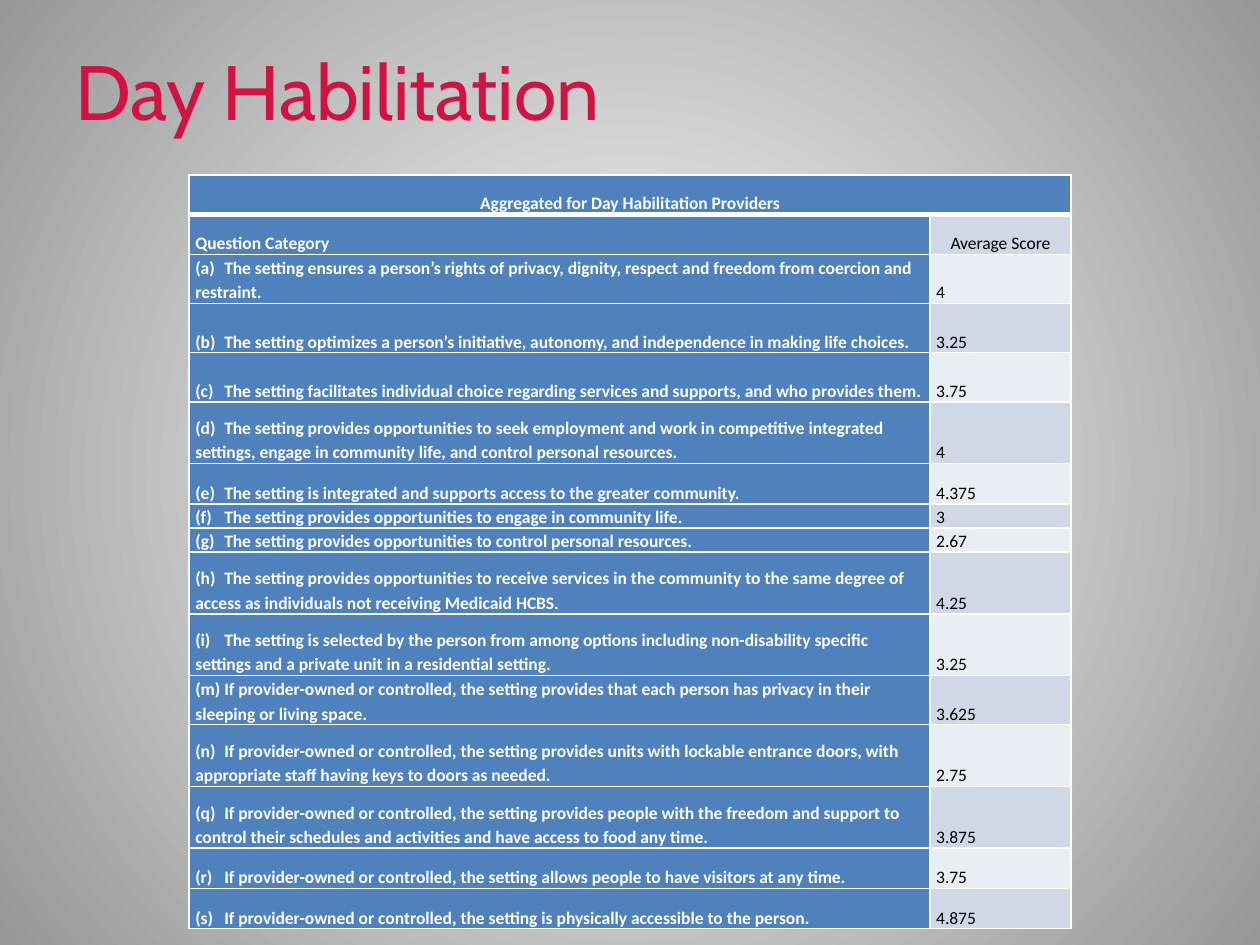
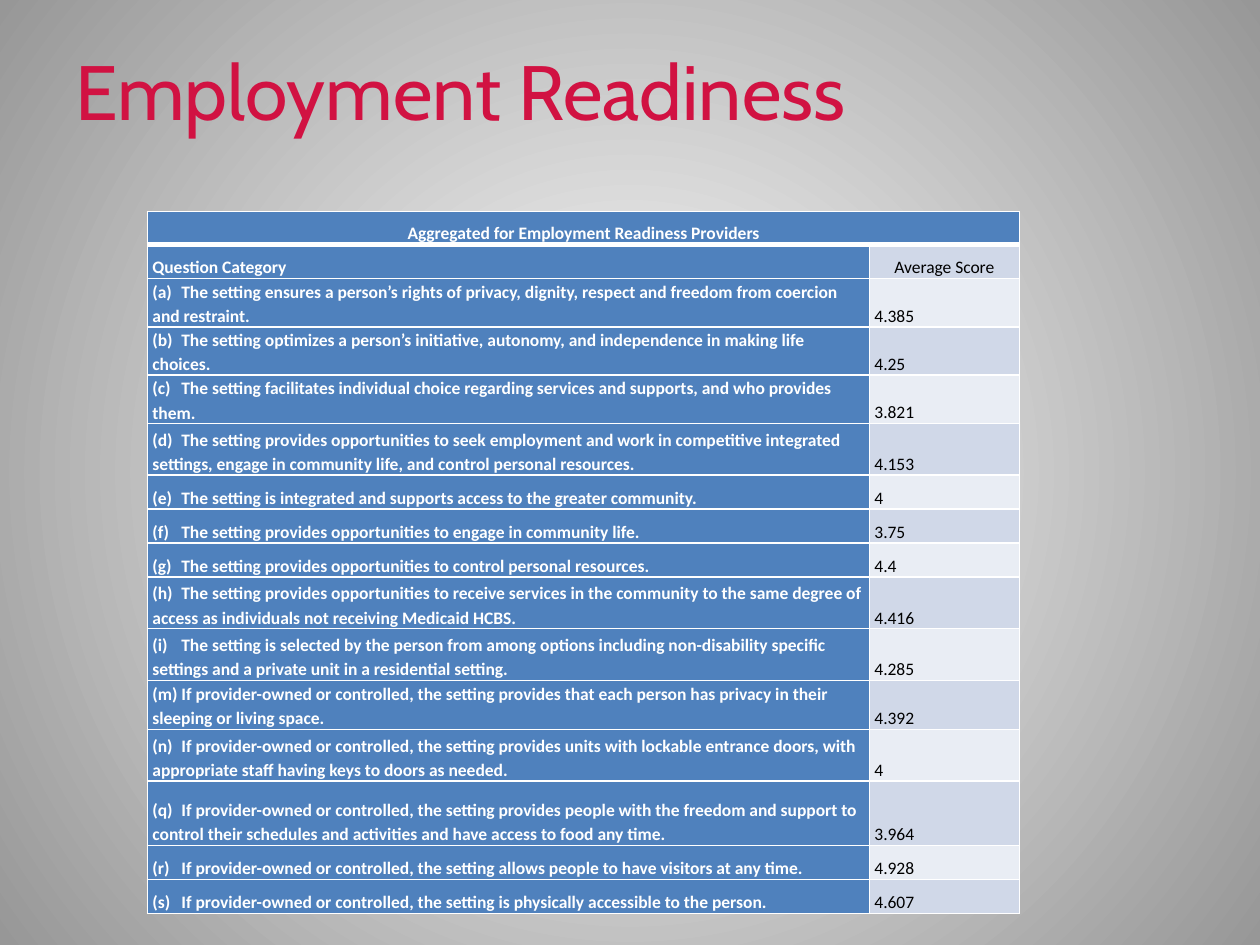
from lxml import etree
from pptx import Presentation
from pptx.dml.color import RGBColor as RGB
from pptx.enum.text import MSO_ANCHOR as Anchor, PP_ALIGN as Align
from pptx.oxml.ns import qn
from pptx.util import Inches, Pt

# Content
QUESTIONS = [
    ("(a)", "The setting ensures a person’s rights of privacy, dignity, respect and freedom from coercion and restraint."),
    ("(b)", "The setting optimizes a person’s initiative, autonomy, and independence in making life choices."),
    ("(c)", "The setting facilitates individual choice regarding services and supports, and who provides them."),
    ("(d)", "The setting provides opportunities to seek employment and work in competitive integrated settings, "
            "engage in community life, and control personal resources."),
    ("(e)", "The setting is integrated and supports access to the greater community."),
    ("(f)", "The setting provides opportunities to engage in community life."),
    ("(g)", "The setting provides opportunities to control personal resources."),
    ("(h)", "The setting provides opportunities to receive services in the community to the same degree of access "
            "as individuals not receiving Medicaid HCBS."),
    ("(i)", "The setting is selected by the person from among options including non-disability specific settings "
            "and a private unit in a residential setting."),
    ("(m)", "If provider-owned or controlled, the setting provides that each person has privacy in their sleeping "
            "or living space."),
    ("(n)", "If provider-owned or controlled, the setting provides units with lockable entrance doors, with "
            "appropriate staff having keys to doors as needed."),
    ("(q)", "If provider-owned or controlled, the setting provides people with the freedom and support to control "
            "their schedules and activities and have access to food any time."),
    ("(r)", "If provider-owned or controlled, the setting allows people to have visitors at any time."),
    ("(s)", "If provider-owned or controlled, the setting is physically accessible to the person."),
]
HEADS = ("Question Category", "Average Score")
SLIDES = [
    dict(title="Day Habilitation", left=1.5, top=1.39, cols=(5.88, 1.12), inset=0.05,
         rows=(0.31, 0.32, 0.39, 0.39, 0.39, 0.49, 0.32, 0.19, 0.19,
               0.49, 0.49, 0.39, 0.49, 0.49, 0.32, 0.32),
         scores=("4", "3.25", "3.75", "4", "4.375", "3", "2.67", "4.25",
                 "3.25", "3.625", "2.75", "3.875", "3.75", "4.875")),
    dict(title="Employment Readiness", left=1.17, top=1.68, cols=(5.73, 1.19), inset=0.04,
         rows=(0.26, 0.27, 0.27, 0.27, 0.27, 0.41, 0.27, 0.27, 0.27,
               0.41, 0.41, 0.39, 0.41, 0.51, 0.27, 0.27),
         scores=("4.385", "4.25", "3.821", "4.153", "4", "3.75", "4.4", "4.416",
                 "4.285", "4.392", "4", "3.964", "4.928", "4.607")),
]

# Shared look
RED = RGB(0xD1, 0x12, 0x42)
BLUE = RGB(0x4F, 0x81, 0xBD)
BANDS = RGB(0xD0, 0xD8, 0xE8), RGB(0xE9, 0xED, 0xF4)
WHITE = RGB(0xFF, 0xFF, 0xFF)
GREY = RGB(0x97, 0x97, 0x97)
BLACK = RGB(0, 0, 0)
TAB = 0.23  # from question letter to question text


def write(frame, text, font="Calibri", size=10, color=BLACK, bold=False,
          align=Align.LEFT, space=1.0, tab=None):
    frame.word_wrap = True
    para = frame.paragraphs[0]
    para.text = text
    para.alignment, para.line_spacing = align, space
    if tab:
        stops = etree.SubElement(para._p.get_or_add_pPr(), qn("a:tabLst"))
        etree.SubElement(stops, qn("a:tab"), pos=str(Inches(tab)), algn="l")
    face = para.runs[0].font
    face.name, face.size, face.bold = font, Pt(size), bold
    face.color.rgb = color


def shade(slide):
    """Radial background, white centre to grey rim."""
    fill = slide.background.fill
    fill.gradient()
    for stop, color in zip(fill.gradient_stops, (WHITE, GREY)):
        stop.color.rgb = color
    lin = slide.element.find(".//" + qn("a:lin"))
    ring = etree.Element(qn("a:path"), {"path": "circle"})
    etree.SubElement(ring, qn("a:fillToRect"), {side: "50000" for side in "ltrb"})
    lin.getparent().replace(lin, ring)


def edge(cell, **wide):
    """White borders, 1 pt unless a side (L, R, T, B) says otherwise."""
    props = cell._tc.get_or_add_tcPr()
    for side in "LRTB":
        line = etree.SubElement(props, qn("a:ln" + side), w=str(Pt(wide.get(side, 1))))
        paint = etree.SubElement(line, qn("a:solidFill"))
        etree.SubElement(paint, qn("a:srgbClr"), val=str(WHITE))


def grid(slide, data):
    """Score table: one banner row, one head row, one row per question."""
    cols, rows = data["cols"], data["rows"]
    banner = f"Aggregated for {data['title']} Providers"
    texts = [(banner, ""), HEADS]
    texts += [("\t".join(pair), score) for pair, score in zip(QUESTIONS, data["scores"])]
    table = slide.shapes.add_table(
        len(rows), len(cols), Inches(data["left"]), Inches(data["top"]),
        Inches(sum(cols)), Inches(sum(rows))).table
    table.first_row = table.horz_banding = False
    for col, width in zip(table.columns, cols):
        col.width = Inches(width)
    for row, height in zip(table.rows, rows):
        row.height = Inches(height)
    table.cell(0, 0).merge(table.cell(0, 1))

    for r, line in enumerate(texts):
        for c, text in enumerate(line):
            cell = table.cell(r, c)
            cell.margin_left = cell.margin_right = Inches(data["inset"])
            cell.margin_top = cell.margin_bottom = 0
            cell.vertical_anchor = Anchor.BOTTOM
            edge(cell, **({0: {"B": 3}, 1: {"T": 3}}.get(r, {})))
            label = c == 0 or r == 0
            cell.fill.solid()
            cell.fill.fore_color.rgb = BLUE if label else BANDS[(r + 1) % 2]
            if text:
                centred = r == 0 or (r, c) == (1, 1)
                write(cell.text_frame, text, color=WHITE if label else BLACK, bold=label,
                      align=Align.CENTER if centred else Align.LEFT, space=1.15,
                      tab=TAB if "\t" in text else None)


def main():
    deck = Presentation()
    deck.slide_width, deck.slide_height = Inches(10), Inches(7.5)
    for data in SLIDES:
        slide = deck.slides.add_slide(deck.slide_layouts[6])
        shade(slide)
        box = slide.shapes.add_textbox(Inches(0.5), Inches(0.3), Inches(9), Inches(1.25))
        write(box.text_frame, data["title"], font="Cabin", size=44, color=RED)
        grid(slide, data)
    deck.save("out.pptx")


if __name__ == "__main__":
    main()
